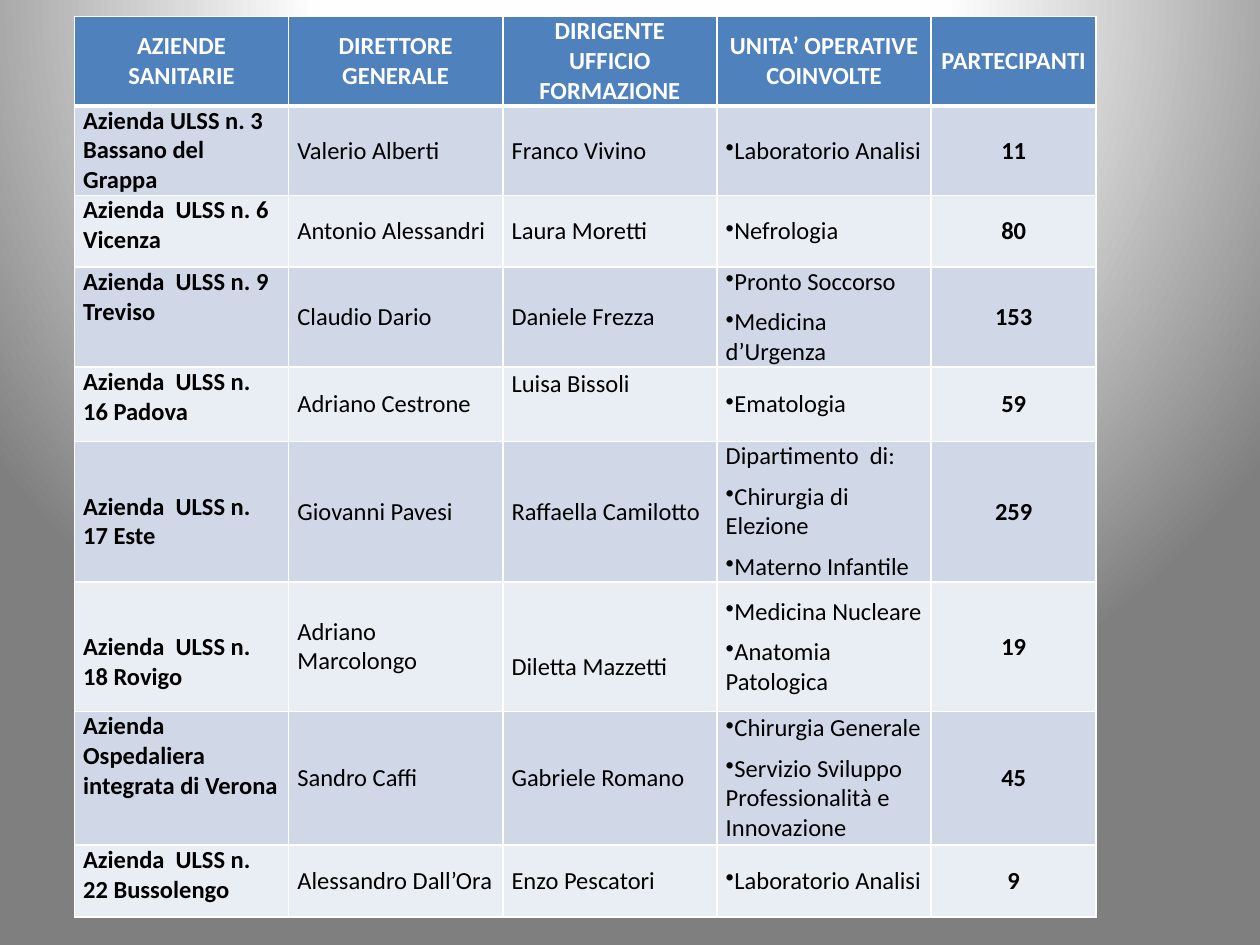
from dataclasses import dataclass

import pptx
import pptx.dml.color
import pptx.enum.text
import pptx.oxml
import pptx.oxml.ns
import pptx.util
from pptx.util import Inches

ALIGN = pptx.enum.text.PP_ALIGN
ANCHOR = pptx.enum.text.MSO_ANCHOR


@dataclass(frozen=True)
class Theme:
    font: str = "Calibri"
    text_size: int = 14
    paragraph_gap: int = 6
    header_fill: str = "4F81BD"
    header_text: str = "FFFFFF"
    body_text: str = "000000"
    bands: tuple[str, str] = ("D0D8E8", "E9EDF4")
    border: str = "FFFFFF"
    thin: int = 1
    thick: int = 3
    background: tuple[tuple[int, str], ...] = ((0, "FFFFFF"), (40, "FEFEFE"), (100, "7F7F7F"))


@dataclass(frozen=True)
class Column:
    heading: str
    width: float
    bold: bool = False
    bulleted: bool = False
    alignment: ALIGN = ALIGN.LEFT
    anchor: ANCHOR = ANCHOR.MIDDLE


@dataclass(frozen=True)
class Agency:
    height: float
    name: str
    director: str
    training_head: str
    units: tuple[str, ...]
    participants: int
    units_intro: str = ""
    name_top: float = 0
    head_top: float = 0
    head_bottom: float = 0


@dataclass(frozen=True)
class CellStyle:
    fill: str
    color: str
    bold: bool
    alignment: ALIGN
    anchor: ANCHOR
    top_border: int
    bottom_border: int
    margin_top: float = 0
    margin_bottom: float = 0


THEME = Theme()
HEADER_HEIGHT = 0.7
SIDE_MARGIN = 0.07

COLUMNS = [
    Column("AZIENDE SANITARIE", 1.7, bold=True, anchor=ANCHOR.TOP),
    Column("DIRETTORE GENERALE", 1.7),
    Column("DIRIGENTE UFFICIO FORMAZIONE", 1.7),
    Column("UNITA’ OPERATIVE COINVOLTE", 1.7, bulleted=True),
    Column("PARTECIPANTI", 1.31, bold=True, alignment=ALIGN.CENTER),
]

AGENCIES = [
    Agency(0.71, "Azienda ULSS n. 3 Bassano del Grappa", "Valerio Alberti", "Franco Vivino",
           ("Laboratorio Analisi",), 11),
    Agency(0.57, "Azienda  ULSS n. 6 Vicenza", "Antonio Alessandri", "Laura Moretti",
           ("Nefrologia",), 80),
    Agency(0.79, "Azienda  ULSS n. 9 Treviso", "Claudio Dario", "Daniele Frezza",
           ("Pronto Soccorso", "Medicina d’Urgenza"), 153),
    Agency(0.59, "Azienda  ULSS n. 16 Padova", "Adriano Cestrone", "Luisa Bissoli",
           ("Ematologia",), 59, head_bottom=0.32),
    Agency(1.11, "Azienda  ULSS n. 17 Este", "Giovanni Pavesi", "Raffaella Camilotto",
           ("Chirurgia di Elezione", "Materno Infantile"), 259,
           units_intro="Dipartimento  di:", name_top=0.4),
    Agency(1.03, "Azienda  ULSS n. 18 Rovigo", "Adriano Marcolongo", "Diletta Mazzetti",
           ("Medicina Nucleare", "Anatomia Patologica"), 19, name_top=0.4, head_top=0.32),
    Agency(1.06, "Azienda Ospedaliera integrata di Verona", "Sandro Caffi", "Gabriele Romano",
           ("Chirurgia Generale", "Servizio Sviluppo Professionalità e Innovazione"), 45),
    Agency(0.57, "Azienda  ULSS n. 22 Bussolengo", "Alessandro Dall’Ora", "Enzo Pescatori",
           ("Laboratorio Analisi",), 9),
]


def rgb(color: str) -> pptx.dml.color.RGBColor:
    return pptx.dml.color.RGBColor.from_string(color)


def set_background(slide) -> None:
    """Radial gradient centred above the slide."""
    stops = "".join(
        f'<a:gs pos="{position * 1000}"><a:srgbClr val="{color}"/></a:gs>'
        for position, color in THEME.background
    )
    background = pptx.oxml.parse_xml(
        f'<p:bg {pptx.oxml.ns.nsdecls("p", "a")}><p:bgPr><a:gradFill rotWithShape="1">'
        f'<a:gsLst>{stops}</a:gsLst><a:path path="circle">'
        '<a:fillToRect l="50000" t="-80000" r="50000" b="180000"/></a:path>'
        "</a:gradFill><a:effectLst/></p:bgPr></p:bg>"
    )
    slide.element.cSld.insert(0, background)


def set_borders(cell, top: int, bottom: int) -> None:
    properties = cell._tc.get_or_add_tcPr()
    sides = {"lnL": THEME.thin, "lnR": THEME.thin, "lnT": top, "lnB": bottom}
    for side, width in sides.items():
        properties.append(pptx.oxml.parse_xml(
            f'<a:{side} {pptx.oxml.ns.nsdecls("a")} w="{pptx.util.Pt(width)}"><a:solidFill>'
            f'<a:srgbClr val="{THEME.border}"/></a:solidFill></a:{side}>'
        ))


def add_bullet(paragraph) -> None:
    properties = paragraph._p.get_or_add_pPr()
    properties.set("marL", "0")
    properties.set("indent", "0")
    properties.append(pptx.oxml.parse_xml(
        f'<a:buChar {pptx.oxml.ns.nsdecls("a")} char="•"/>'
    ))


def fill_cell(cell, lines: list[tuple[str, bool]], style: CellStyle) -> None:
    """Write (text, bulleted) lines into a cell and format it."""
    set_borders(cell, style.top_border, style.bottom_border)
    cell.fill.solid()
    cell.fill.fore_color.rgb = rgb(style.fill)
    cell.vertical_anchor = style.anchor
    cell.margin_left = cell.margin_right = Inches(SIDE_MARGIN)
    cell.margin_top = Inches(style.margin_top)
    cell.margin_bottom = Inches(style.margin_bottom)
    for index, (text, bulleted) in enumerate(lines):
        paragraph = cell.text_frame.add_paragraph() if index else cell.text_frame.paragraphs[0]
        paragraph.text = text
        paragraph.alignment = style.alignment
        if index:
            paragraph.space_before = pptx.util.Pt(THEME.paragraph_gap)
        if bulleted:
            add_bullet(paragraph)
        paragraph.font.name = THEME.font
        paragraph.font.size = pptx.util.Pt(THEME.text_size)
        paragraph.font.bold = style.bold
        paragraph.font.color.rgb = rgb(style.color)


def fill_agency_row(table, row: int, agency: Agency) -> None:
    texts = [(agency.name,), (agency.director,), (agency.training_head,),
             agency.units, (str(agency.participants),)]
    margins = [(agency.name_top, 0), (0, 0), (agency.head_top, agency.head_bottom), (0, 0), (0, 0)]
    for index, (column, entries, (top, bottom)) in enumerate(zip(COLUMNS, texts, margins)):
        lines = [(entry, column.bulleted) for entry in entries]
        if column.bulleted and agency.units_intro:
            lines.insert(0, (agency.units_intro, False))
        fill_cell(table.cell(row, index), lines, CellStyle(
            THEME.bands[(row - 1) % 2], THEME.body_text, column.bold, column.alignment,
            column.anchor, THEME.thick if row == 1 else THEME.thin, THEME.thin, top, bottom))


def add_agency_table(slide) -> None:
    heights = [HEADER_HEIGHT] + [agency.height for agency in AGENCIES]
    width = sum(column.width for column in COLUMNS)
    table = slide.shapes.add_table(
        len(heights), len(COLUMNS), Inches(0.59), Inches(0.13), Inches(width), Inches(sum(heights))
    ).table
    for row, height in zip(table.rows, heights):
        row.height = Inches(height)
    # Header row
    header_style = CellStyle(THEME.header_fill, THEME.header_text, True, ALIGN.CENTER,
                             ANCHOR.MIDDLE, THEME.thin, THEME.thick)
    for index, column in enumerate(COLUMNS):
        table.columns[index].width = Inches(column.width)
        fill_cell(table.cell(0, index), [(column.heading, False)], header_style)
    # One row for each health agency
    for row, agency in enumerate(AGENCIES, start=1):
        fill_agency_row(table, row, agency)


def main() -> None:
    presentation = pptx.Presentation()
    presentation.slide_width = Inches(10)
    presentation.slide_height = Inches(7.5)
    slide = presentation.slides.add_slide(presentation.slide_layouts[6])
    set_background(slide)
    add_agency_table(slide)
    presentation.save("out.pptx")


if __name__ == "__main__":
    main()
